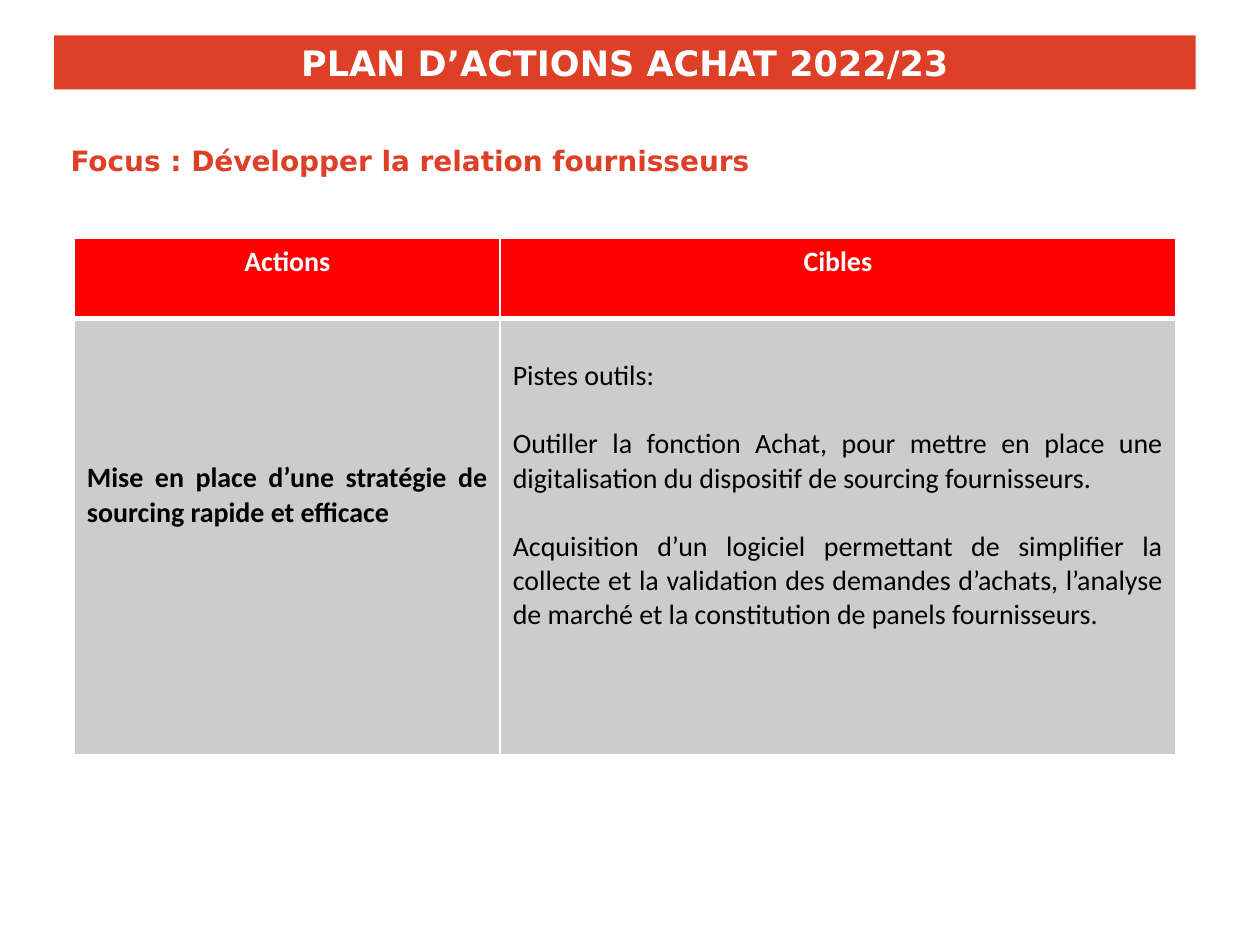
from lxml import etree
from pptx import Presentation
from pptx.dml.color import RGBColor
from pptx.enum.text import MSO_ANCHOR, MSO_AUTO_SIZE, PP_ALIGN
from pptx.oxml.ns import qn
from pptx.util import Inches, Pt

CENTER, LEFT, JUST = PP_ALIGN.CENTER, PP_ALIGN.LEFT, PP_ALIGN.JUSTIFY
TOP, MIDDLE = MSO_ANCHOR.TOP, MSO_ANCHOR.MIDDLE
NO_FIT = MSO_AUTO_SIZE.NONE
BRICK, RED, GREY, WHITE, BLACK = "DD4026", "FF0000", "CCCCCC", "FFFFFF", "000000"
LINE = 0.27  # height of one table text line, inches


def color(code):
    return RGBColor.from_string(code)


class Deck:
    head_font = "DejaVu Sans"
    cell_font = "Calibri"
    cell_size = 16

    def __init__(self, wide, high):
        self.prs = Presentation()
        self.prs.slide_width, self.prs.slide_height = Inches(wide), Inches(high)
        self.slide = self.prs.slides.add_slide(self.prs.slide_layouts[1])

    def style(self, para, font, size, ink, bold, align):
        para.alignment = align
        para.font.name, para.font.size = font, Pt(size)
        para.font.bold, para.font.color.rgb = bold, color(ink)

    def holder(self, index, box, text, size, ink, align, anchor):
        shape = self.slide.placeholders[index]
        shape.left, shape.top, shape.width, shape.height = map(Inches, box)
        frame = shape.text_frame
        frame.text = text
        frame.word_wrap, frame.auto_size = True, NO_FIT
        frame.vertical_anchor = anchor
        para = frame.paragraphs[0]
        para.space_before = Pt(0)
        self.style(para, self.head_font, size, ink, True, align)
        return shape

    def title(self, box, text):
        shape = self.holder(0, box, text, 20, WHITE, CENTER, MIDDLE)
        shape.fill.solid()
        shape.fill.fore_color.rgb = color(BRICK)

    def focus(self, box, text):
        shape = self.holder(1, box, text, 16, BRICK, LEFT, TOP)
        para = shape.text_frame.paragraphs[0]
        para.line_spacing = 1.5
        # No bullet and no hanging indent
        props = para._p.get_or_add_pPr()
        props.set("marL", "0")
        props.set("indent", "0")
        props.append(etree.Element(qn("a:buNone")))

    def table(self, box, cols, rows):
        frame = self.slide.shapes.add_table(len(rows), len(cols), *map(Inches, box))
        grid = frame.table
        for col, width in zip(grid.columns, cols):
            col.width = Inches(width)
        for row, height in zip(grid.rows, rows):
            row.height = Inches(height)
        return grid

    def cell(self, cell, lines, fill, ink, bold, align, skip=0, base=1):
        cell.fill.solid()
        cell.fill.fore_color.rgb = color(fill)
        cell.margin_top = Inches(0.05 + skip * LINE)
        cell.text = "\n".join(lines)
        for i, para in enumerate(cell.text_frame.paragraphs):
            self.style(para, self.cell_font, self.cell_size, ink, bold, align)
            if i:
                para.space_before = Inches(LINE)
        self.border(cell, base)

    def border(self, cell, base):
        props = cell._tc.get_or_add_tcPr()
        top = 3 if base == 1 else 1
        for i, (side, width) in enumerate(zip("LRTB", (1, 1, top, base))):
            line = etree.Element(qn("a:ln" + side), w=str(Pt(width)))
            solid = etree.SubElement(line, qn("a:solidFill"))
            etree.SubElement(solid, qn("a:srgbClr"), val=WHITE)
            props.insert(i, line)


def main():
    deck = Deck(10, 7.5)

    # Banner and subtitle
    deck.title((0.43, 0.28, 9.06, 0.43), "PLAN D’ACTIONS ACHAT 2022/23")
    deck.focus((0.46, 0.96, 9, 0.55), "Focus : Développer la relation fournisseurs")

    # Actions and targets
    grid = deck.table((0.59, 1.89, 8.74, 4.1), (3.38, 5.36), (0.64, 3.46))
    for i, head in enumerate(("Actions", "Cibles")):
        deck.cell(grid.cell(0, i), [head], RED, WHITE, True, CENTER, base=3)
    action = ["Mise en place d’une stratégie de sourcing rapide et efficace"]
    goals = [
        "Pistes outils:",
        "Outiller la fonction Achat, pour mettre en place une digitalisation "
        "du dispositif de sourcing fournisseurs.",
        "Acquisition d’un logiciel permettant de simplifier la collecte et la "
        "validation des demandes d’achats, l’analyse de marché et la "
        "constitution de panels fournisseurs.",
    ]
    deck.cell(grid.cell(1, 0), action, GREY, BLACK, True, JUST, skip=4)
    deck.cell(grid.cell(1, 1), goals, GREY, BLACK, False, JUST, skip=1)

    deck.prs.save("out.pptx")


if __name__ == "__main__":
    main()
